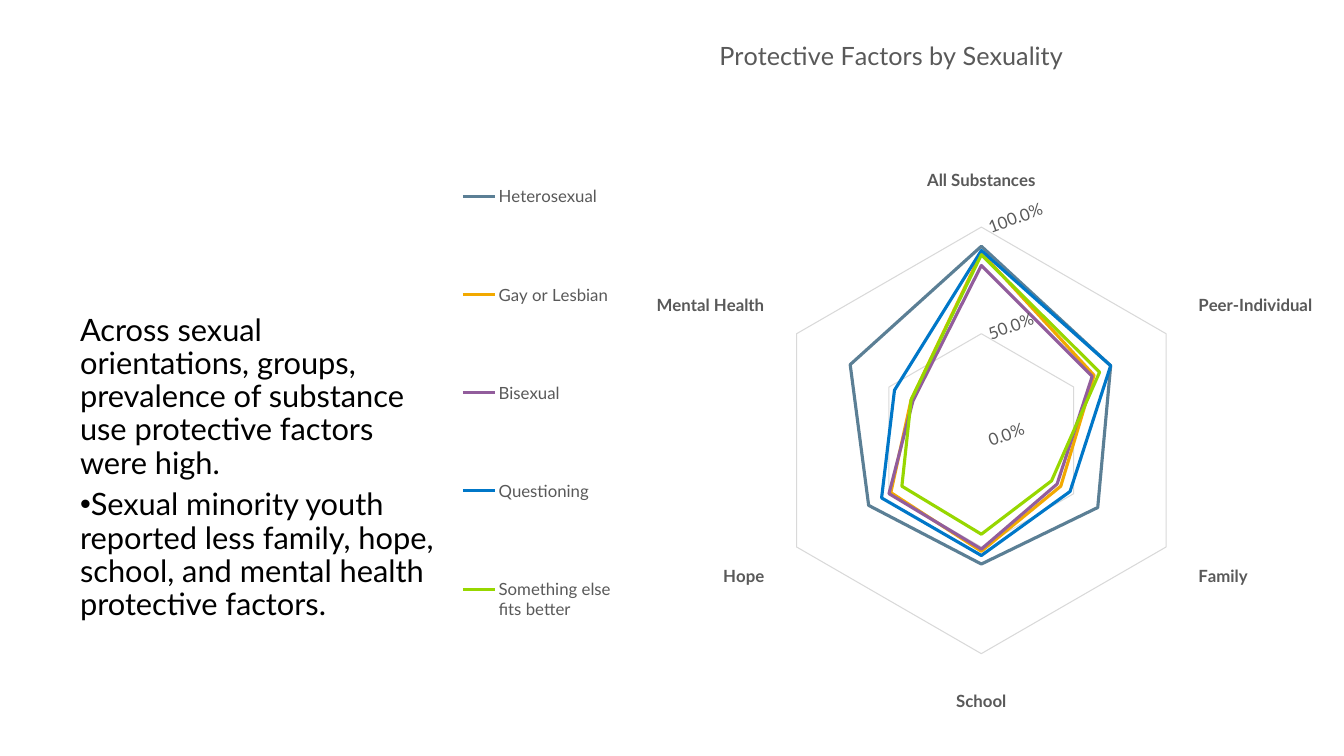
from dataclasses import dataclass

from lxml.etree import SubElement
from pptx import Presentation
from pptx.chart.data import CategoryChartData
from pptx.dml.color import RGBColor
from pptx.enum.chart import XL_CHART_TYPE as ChartType
from pptx.enum.chart import XL_LEGEND_POSITION as LegendPosition
from pptx.enum.chart import XL_TICK_MARK as TickMark
from pptx.enum.text import MSO_ANCHOR, MSO_AUTO_SIZE, PP_ALIGN
from pptx.oxml.ns import qn
from pptx.util import Inches, Pt


@dataclass(frozen=True)
class Theme:
    font: str = "Lato"
    ink: str = "000000"
    label: str = "595959"
    rule: str = "D9D9D9"
    body_size: float = 22
    title_size: float = 18
    label_size: float = 12
    rule_width: float = 0.75
    series_width: float = 2.25


@dataclass(frozen=True)
class Group:
    name: str
    color: str
    prevalence: tuple[float, ...]


@dataclass(frozen=True)
class Area:
    """A rectangle in grid columns and rows."""
    column: float
    row: float
    columns: float
    rows: float


THEME = Theme()
SLIDE_WIDTH, SLIDE_HEIGHT = Inches(13.33), Inches(7.5)
COLUMN, ROW = SLIDE_WIDTH / 96, SLIDE_HEIGHT / 75

SUMMARY_AREA = Area(5, 30.7, 27, 37.3)
RADAR_AREA = Area(32, 0.2, 63.5, 75)

SUMMARY = (
    ("Across sexual orientations, groups, prevalence of substance use "
     "protective factors were high.", None),
    ("Sexual minority youth reported less family, hope, school, and mental "
     "health protective factors.", "•"),
)
FACTORS = ("All Substances", "Peer-Individual", "Family", "School", "Hope",
           "Mental Health")
GROUPS = (
    Group("Heterosexual", "5B7F95", (0.91, 0.7, 0.63, 0.58, 0.61, 0.71)),
    Group("Gay or Lesbian", "F2A900", (0.88, 0.61, 0.43, 0.52, 0.49, 0.38)),
    Group("Bisexual", "925D9C", (0.82, 0.6, 0.41, 0.51, 0.5, 0.37)),
    Group("Questioning", "0077C8", (0.89, 0.7, 0.48, 0.54, 0.54, 0.47)),
    Group("Something else fits better", "97D700",
          (0.87, 0.64, 0.38, 0.44, 0.43, 0.38)),
)


def emu(area: Area) -> tuple[int, int, int, int]:
    return (round(area.column * COLUMN), round(area.row * ROW),
            round(area.columns * COLUMN), round(area.rows * ROW))


def style_font(font, size: float, color: str, bold: bool = False) -> None:
    font.name, font.size, font.bold = THEME.font, Pt(size), bold
    font.color.rgb = RGBColor.from_string(color)


def style_line(line, color: str, width: float) -> None:
    line.color.rgb = RGBColor.from_string(color)
    line.width = Pt(width)


def write(paragraph, text: str, *, size: float, color: str,
          bullet: str | None = None, line_spacing: float | None = None,
          space_after: float = 0) -> None:
    properties = paragraph._p.get_or_add_pPr()
    properties.set("marL", "0")
    properties.set("indent", str(Inches(-0.25) if bullet else 0))
    paragraph.alignment = PP_ALIGN.LEFT
    paragraph.line_spacing = line_spacing
    paragraph.space_before, paragraph.space_after = Pt(0), Pt(space_after)
    if bullet:
        SubElement(properties, qn("a:buChar")).set("char", bullet)
    else:
        SubElement(properties, qn("a:buNone"))
    run = paragraph.add_run()
    run.text = text
    style_font(run.font, size, color)


def place_part(part, **shares: float) -> None:
    """Fix a chart part by shares (x, y, w, h) of the chart's size."""
    for automatic in part.findall(qn("c:layout")):
        part.remove(automatic)
    layout = part.makeelement(qn("c:layout"))
    before = [child for child in part
              if child.tag in (qn("c:tx"), qn("c:legendPos"))]
    part.insert(len(before), layout)
    manual = SubElement(layout, qn("c:manualLayout"))
    if part.tag == qn("c:plotArea"):
        SubElement(manual, qn("c:layoutTarget")).set("val", "inner")
    for side in ("x", "y"):
        SubElement(manual, qn(f"c:{side}Mode")).set("val", "edge")
    for side, share in shares.items():
        SubElement(manual, qn(f"c:{side}")).set("val", str(share))


def add_summary(slide) -> None:
    body = slide.placeholders[1]
    body.left, body.top, body.width, body.height = emu(SUMMARY_AREA)
    frame = body.text_frame
    frame.word_wrap = True
    frame.auto_size = MSO_AUTO_SIZE.NONE
    frame.vertical_anchor = MSO_ANCHOR.TOP
    for index, (text, bullet) in enumerate(SUMMARY):
        paragraph = frame.add_paragraph() if index else frame.paragraphs[0]
        write(paragraph, text, size=THEME.body_size, color=THEME.ink,
              bullet=bullet, line_spacing=0.9, space_after=6)


def style_axes(chart) -> None:
    factors, prevalence = chart.category_axis, chart.value_axis
    for axis in (factors, prevalence):
        axis.major_tick_mark = axis.minor_tick_mark = TickMark.NONE
        style_font(axis.tick_labels.font, THEME.label_size, THEME.label,
                   bold=axis is factors)
    factors.has_major_gridlines = False
    style_line(factors.format.line, THEME.rule, THEME.rule_width)

    prevalence.minimum_scale, prevalence.maximum_scale = 0, 1
    prevalence.major_unit = 0.5
    prevalence.has_major_gridlines = True
    style_line(prevalence.major_gridlines.format.line, THEME.rule,
               THEME.rule_width)
    prevalence.format.line.fill.background()
    prevalence.tick_labels.number_format = "0.0%"
    prevalence.tick_labels.number_format_is_linked = False
    label_box = prevalence._element.find(qn("c:txPr")).find(qn("a:bodyPr"))
    label_box.set("rot", str(-20 * 60000))


def add_radar(slide) -> None:
    data = CategoryChartData(number_format="0%")
    data.categories = FACTORS
    for group in GROUPS:
        data.add_series(group.name, group.prevalence)
    chart = slide.shapes.add_chart(ChartType.RADAR, *emu(RADAR_AREA),
                                   data).chart
    style_font(chart.font, 10, THEME.ink)
    plot = chart.plots[0]
    plot.vary_by_categories = False
    for series, group in zip(plot.series, GROUPS):
        series.smooth = False
        style_line(series.format.line, group.color, THEME.series_width)
    style_axes(chart)

    chart.has_title = True
    write(chart.chart_title.text_frame.paragraphs[0],
          "Protective Factors by Sexuality",
          size=THEME.title_size, color=THEME.label)
    chart.has_legend = True
    chart.legend.position = LegendPosition.TOP
    chart.legend.include_in_layout = False
    style_font(chart.legend.font, THEME.label_size, THEME.label)

    place_part(chart.chart_title._element, x=0.3, y=0.04)
    place_part(chart.legend._element, x=0.01, y=0.14, w=0.18, h=0.78)
    place_part(chart._chartSpace.chart.plotArea, x=0.36, y=0.21, w=0.48, h=0.74)


def main() -> None:
    deck = Presentation()
    deck.slide_width, deck.slide_height = SLIDE_WIDTH, SLIDE_HEIGHT
    slide = deck.slides.add_slide(deck.slide_layouts[1])
    empty_title = slide.shapes.title._element
    empty_title.getparent().remove(empty_title)
    add_summary(slide)
    add_radar(slide)
    deck.save("out.pptx")


if __name__ == "__main__":
    main()
